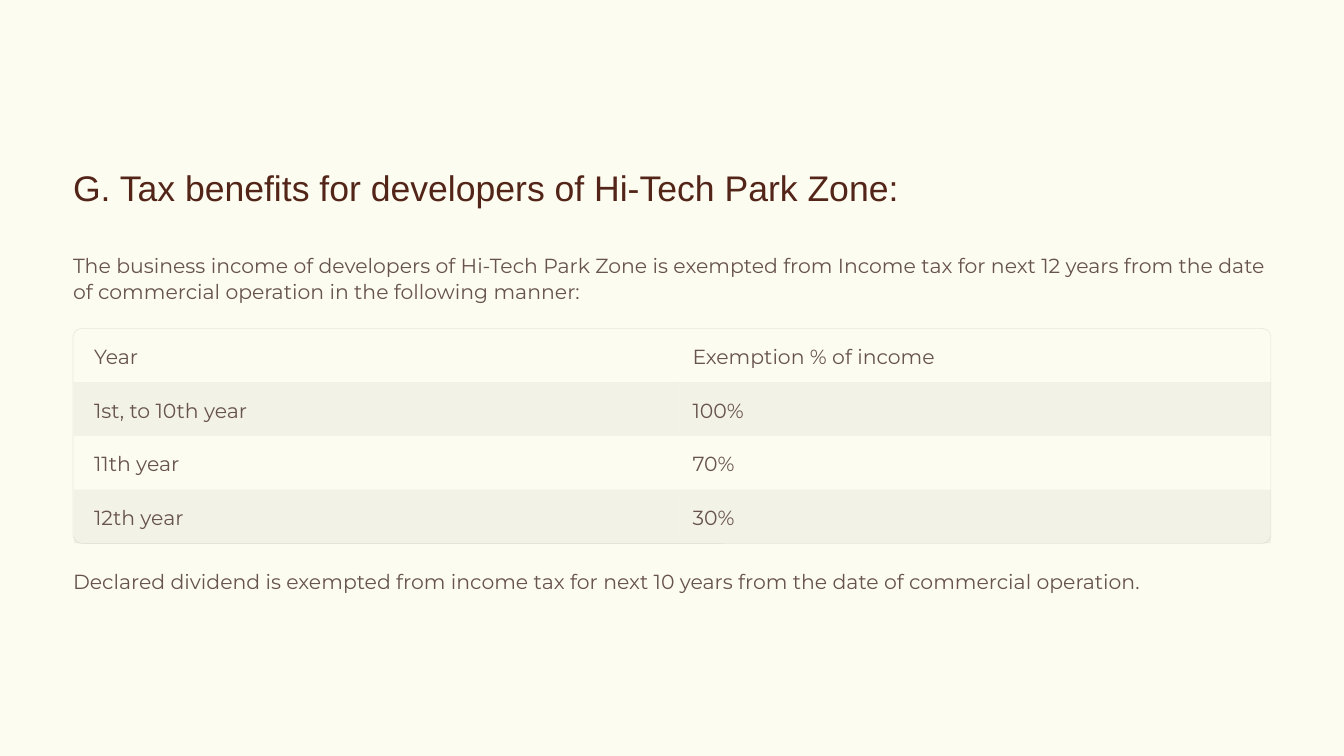
from dataclasses import dataclass
from lxml.etree import SubElement
from pptx import Presentation
from pptx.dml.color import RGBColor
from pptx.enum.shapes import MSO_SHAPE
from pptx.enum.text import MSO_ANCHOR, PP_ALIGN
from pptx.oxml.ns import qn
from pptx.util import Inches, Pt

TITLE = "G. Tax benefits for developers of Hi-Tech Park Zone:"
INTRO = ("The business income of developers of Hi-Tech Park Zone is exempted from Income tax "
         "for next 12 years from the date of commercial operation in the following manner:")
EXEMPTIONS = [
    ("Year", "Exemption % of income"),
    ("1st, to 10th year", "100%"),
    ("11th year", "70%"),
    ("12th year", "30%"),
]
DIVIDEND = ("Declared dividend is exempted from income tax for next 10 years "
            "from the date of commercial operation.")


@dataclass(frozen=True)
class Theme:
    base: tuple = ("000000", 100)
    sand: tuple = ("DEC8AB", 100)
    cream: tuple = ("FFFFF4", 95)
    frame: tuple = ("000000", 8)
    bands: tuple = (("FFFFFF", 4), ("000000", 4))
    title_style: tuple = ("Arial", 30.5, 40, "532418")
    body_style: tuple = ("Montserrat", 17.5, 23, "67534F")


THEME = Theme()
NO_GRID_STYLE = "{2D5ABB26-0587-4C30-8999-92F81FD0307C}"
LEFT, WIDTH = 0.87, 14.26
TABLE_TOP, ROW_H, CELL_PAD, CELL_DROP = 3.91, 0.64, 0.24, 0.02


def paint(fill, tint):
    color, opacity = tint
    fill.solid()
    fill.fore_color.rgb = RGBColor.from_string(color)
    if opacity < 100:
        clr = fill._xPr.find(qn("a:solidFill"))[0]
        SubElement(clr, qn("a:alpha")).set("val", str(opacity * 1000))


def write(tf, text, style):
    name, size, spacing, color = style
    p = tf.paragraphs[0]
    p.alignment = PP_ALIGN.LEFT
    p.line_spacing = Pt(spacing)
    r = p.add_run()
    r.text = text
    r.font.name, r.font.size = name, Pt(size)
    r.font.color.rgb = RGBColor.from_string(color)


def fill_box(sp, top, height, text, style):
    sp.left, sp.top = Inches(LEFT), Inches(top)
    sp.width, sp.height = Inches(WIDTH), Inches(height)
    tf = sp.text_frame
    tf.word_wrap = True
    tf.vertical_anchor = MSO_ANCHOR.TOP
    tf.margin_left = tf.margin_right = tf.margin_top = tf.margin_bottom = 0
    write(tf, text, style)


def add_body(s, top, height, text):
    fill_box(s.shapes.add_textbox(0, 0, 0, 0), top, height, text, THEME.body_style)


def add_backdrop(s, prs):
    paint(s.background.fill, THEME.base)
    title = s.shapes.title._element
    for tint in (THEME.sand, THEME.cream):
        sheet = s.shapes.add_shape(MSO_SHAPE.RECTANGLE, 0, 0, prs.slide_width, prs.slide_height)
        sheet.shadow.inherit = False
        paint(sheet.fill, tint)
        sheet.line.fill.background()
        title.addprevious(sheet._element)


def add_exemptions(s):
    height = Inches(ROW_H * len(EXEMPTIONS))
    frame = s.shapes.add_shape(MSO_SHAPE.ROUNDED_RECTANGLE, Inches(LEFT), Inches(TABLE_TOP),
                               Inches(WIDTH), height)
    frame.shadow.inherit = False
    frame.adjustments[0] = 0.04
    frame.fill.background()
    paint(frame.line.fill, THEME.frame)
    frame.line.width = Pt(0.6)

    table = s.shapes.add_table(len(EXEMPTIONS), 2, Inches(LEFT + 0.01), Inches(TABLE_TOP),
                               Inches(WIDTH - 0.01), height).table
    table.horz_banding = False
    table._tbl.tblPr[0].text = NO_GRID_STYLE
    for i, values in enumerate(EXEMPTIONS):
        for j, text in enumerate(values):
            cell = table.cell(i, j)
            paint(cell.fill, THEME.bands[i % 2])
            cell.margin_left = cell.margin_right = Inches(CELL_PAD)
            cell.margin_top, cell.margin_bottom = Inches(CELL_DROP), 0
            cell.vertical_anchor = MSO_ANCHOR.MIDDLE
            write(cell.text_frame, text, THEME.body_style)


def main():
    prs = Presentation()
    prs.slide_width, prs.slide_height = Inches(16), Inches(9)
    s = prs.slides.add_slide(prs.slide_layouts[5])
    add_backdrop(s, prs)
    fill_box(s.shapes.title, 1.93, 0.56, TITLE, THEME.title_style)
    add_body(s, 2.98, 0.64, INTRO)
    add_exemptions(s)
    add_body(s, 6.75, 0.32, DIVIDEND)
    prs.save("out.pptx")


if __name__ == "__main__":
    main()
